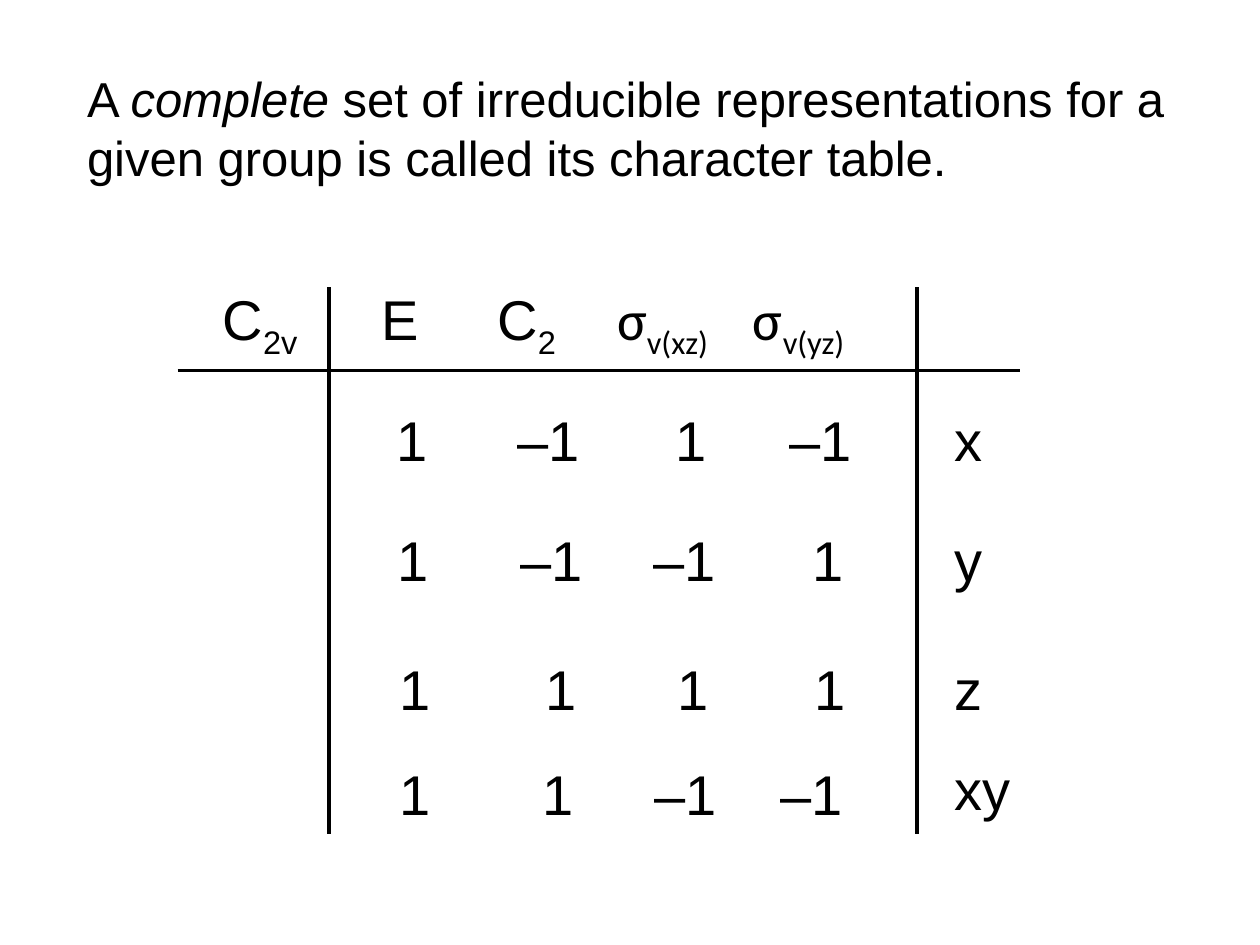
from lxml.etree import SubElement
from pptx import Presentation
from pptx.dml.color import RGBColor
from pptx.enum.shapes import MSO_CONNECTOR
from pptx.enum.text import MSO_ANCHOR, MSO_AUTO_SIZE, PP_ALIGN
from pptx.oxml.ns import qn
from pptx.util import Cm, Pt

COLORS = {"ink": "000000"}
INK = RGBColor.from_string(COLORS["ink"])


def style(p, size):
    p.font.name = "Arial"
    p.font.size = Pt(size)
    p.font.color.rgb = INK


def add_text(s, text, left, top, width):
    """Add a 32 pt text box and return its paragraph."""
    tf = s.shapes.add_textbox(Cm(left), Cm(top), Cm(width), Cm(1.62)).text_frame
    tf.word_wrap = True
    p = tf.paragraphs[0]
    p.text = text
    style(p, 32)
    return p


prs = Presentation()
prs.slide_width, prs.slide_height = Cm(25.4), Cm(19.05)
s = prs.slides.add_slide(prs.slide_layouts[5])

# Title
title = s.shapes.title
title.left, title.top, title.width, title.height = Cm(1.5), Cm(0.97), Cm(22.86), Cm(3.18)
tf = title.text_frame
tf.auto_size = MSO_AUTO_SIZE.NONE
tf.vertical_anchor = MSO_ANCHOR.MIDDLE
p = tf.paragraphs[0]
p.alignment = PP_ALIGN.LEFT
style(p, 28)
for text, italic in [
    ("A ", False),
    ("complete", True),
    (" set of irreducible representations for a given group is called its character table.", False),
]:
    r = p.add_run()
    r.text = text
    r.font.italic = italic

# Header row: symbols with subscripts, set on tab stops
p = add_text(s, "", 4.24, 5.61, 14.22)
tabs = SubElement(p._p.get_or_add_pPr(), qn("a:tabLst"))
p._p.pPr.insert(0, tabs)  # the schema wants tabs before the default run format
for stop in (3.2, 5.54, 7.95, 10.69):
    SubElement(tabs, qn("a:tab"), pos=str(Cm(stop)), algn="l")
for symbol, subscript, font in [
    ("C", "2v", "Arial"),
    ("\tE", "", "Arial"),
    ("\tC", "2", "Arial"),
    ("\tσ", "v(xz)", "Calibri"),
    ("\tσ", "v(yz)", "Calibri"),
]:
    for text, baseline in ((symbol, 0), (subscript, -25000)):
        if text:
            r = p.add_run()
            r.text = text
            r.font.name = font
            r.font._element.set("baseline", str(baseline))

# Rules of the table
for x1, y1, x2, y2 in [
    (3.58, 7.47, 20.57, 7.47),
    (6.63, 5.79, 6.63, 16.81),
    (18.49, 5.79, 18.49, 16.81),
]:
    line = s.shapes.add_connector(MSO_CONNECTOR.STRAIGHT, Cm(x1), Cm(y1), Cm(x2), Cm(y2))
    line.line.color.rgb = INK
    line.line.width = Pt(2)
    SubElement(line._element.spPr, qn("a:effectLst"))

# Rows: top, characters with their left edges, basis function and its top
rows = [
    (8.05, [("1", 7.75), ("–1", 10.19), ("1", 13.36), ("–1", 15.67)], "x", 8.05),
    (10.46, [("1", 7.77), ("–1", 10.24), ("–1", 12.93), ("1", 16.13)], "y", 10.46),
    (13.06, [("1", 7.8), ("1", 10.74), ("1", 13.41), ("1", 16.18)], "z", 13.06),
    (15.19, [("1", 7.8), ("1", 10.69), ("–1", 12.95), ("–1", 15.49)], "xy", 15.09),
]
for top, characters, function, function_top in rows:
    for text, left in characters:
        add_text(s, text, left, top, 0.5 + 0.64 * (len(text) + 0))
    add_text(s, function, 19, function_top, 0.5 + 0.64 * len(function))

prs.save("out.pptx")
